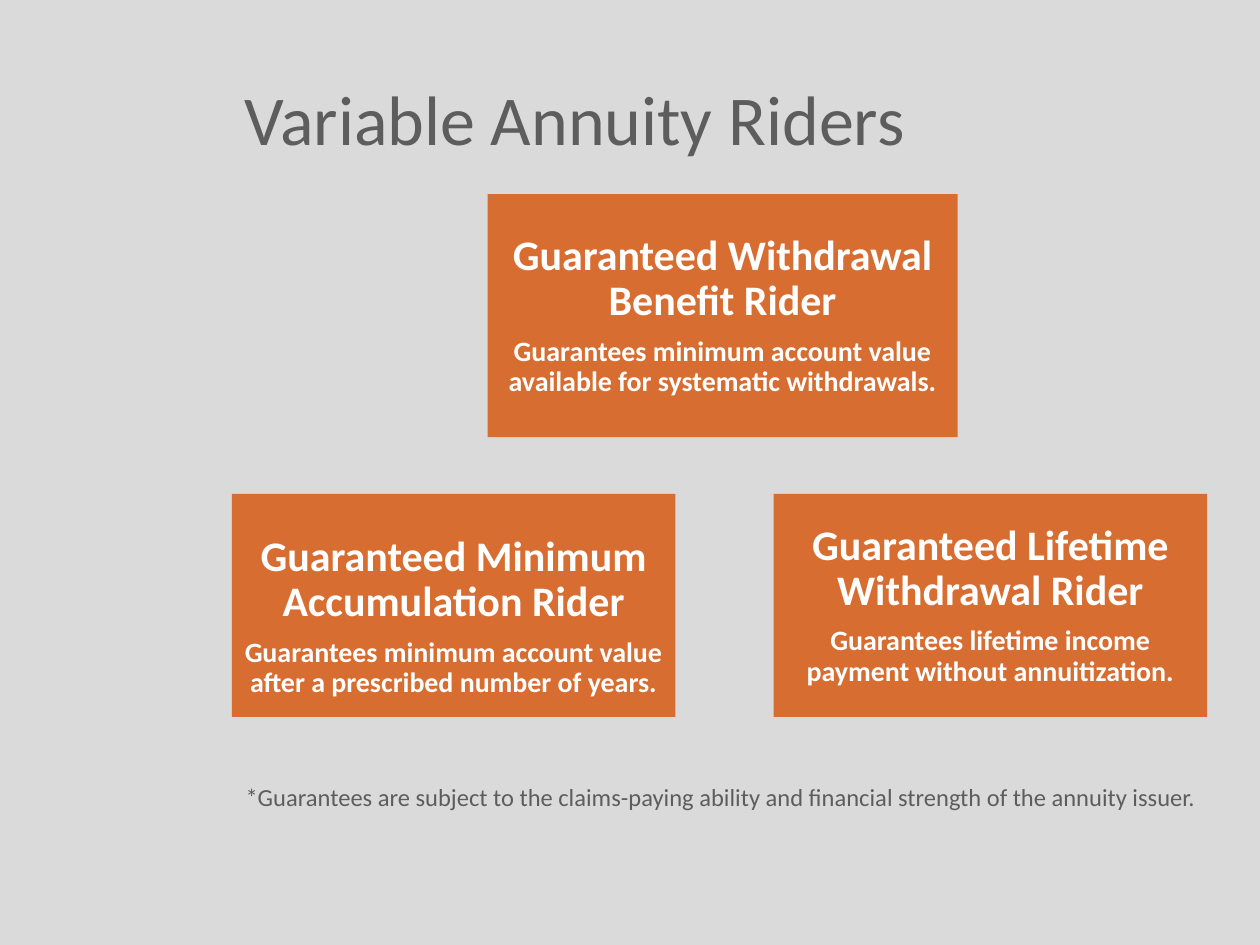
from pptx import Presentation
from pptx.dml.color import RGBColor
from pptx.enum.shapes import MSO_SHAPE as Shape
from pptx.enum.text import MSO_ANCHOR as Anchor, PP_ALIGN as Align
from pptx.util import Inches, Pt

BACKGROUND = RGBColor(0xDA, 0xDA, 0xDA)
GRAY = RGBColor(0x5D, 0x5D, 0x5D)
ORANGE = RGBColor(0xD7, 0x6D, 0x31)
WHITE = RGBColor(0xFF, 0xFF, 0xFF)

# Content
TITLE = "Variable Annuity Riders"
FOOTNOTE = ("*Guarantees are subject to the claims-paying ability and "
            "financial strength of the annuity issuer.")
LEFT = 1.84
LOWER_ROW, LOWER_HEIGHT = 3.92, 1.77
# Heading, description, (left, top, width, height), (top inset, bottom inset)
RIDERS = [
    ("Guaranteed Withdrawal Benefit Rider",
     "Guarantees minimum account value available for systematic withdrawals.",
     (3.87, 1.54, 3.73, 1.93), (0.1, 0.1)),
    ("Guaranteed Minimum Accumulation Rider",
     "Guarantees minimum account value after a prescribed number of years.",
     (LEFT, LOWER_ROW, 3.52, LOWER_HEIGHT), (0.2, 0.02)),
    ("Guaranteed Lifetime Withdrawal Rider",
     "Guarantees lifetime income payment without annuitization.",
     (6.14, LOWER_ROW, 3.44, LOWER_HEIGHT), (0.1, 0.1)),
]


def format_paragraph(paragraph, size, color, align, bold=False):
    paragraph.alignment = align
    font = paragraph.font
    font.name, font.size, font.bold = "Calibri", Pt(size), bold
    font.color.rgb = color


def add_rider(slide, heading, description, place, insets):
    shape = slide.shapes.add_shape(Shape.RECTANGLE, *map(Inches, place))
    shape.shadow.inherit = False
    shape.fill.solid()
    shape.fill.fore_color.rgb = ORANGE
    shape.line.fill.background()
    frame = shape.text_frame
    frame.word_wrap = True
    frame.vertical_anchor = Anchor.MIDDLE
    frame.margin_left = frame.margin_right = Inches(0.1)
    frame.margin_top, frame.margin_bottom = map(Inches, insets)
    frame.text = f"{heading}\n{description}"
    for paragraph, size, gap in zip(frame.paragraphs, (24, 16), (7, 5)):
        format_paragraph(paragraph, size, WHITE, Align.CENTER, bold=True)
        paragraph.line_spacing = 0.9
        paragraph.space_after = Pt(gap)


presentation = Presentation()
presentation.slide_width, presentation.slide_height = Inches(10), Inches(7.5)
slide = presentation.slides.add_slide(presentation.slide_layouts[5])
slide.background.fill.solid()
slide.background.fill.fore_color.rgb = BACKGROUND

# Title
title = slide.shapes.title
title.left, title.top, title.width, title.height = map(Inches, (LEFT, 0.58, 6.98, 0.7))
title.text_frame.text = TITLE
title.text_frame.vertical_anchor = Anchor.MIDDLE
format_paragraph(title.text_frame.paragraphs[0], 40, GRAY, Align.LEFT)

# Rider boxes
for rider in RIDERS:
    add_rider(slide, *rider)

# Footnote
footnote = slide.shapes.add_textbox(*map(Inches, (LEFT + 0.01, 6.16, 8.15, 0.32)))
footnote.text_frame.word_wrap = True
footnote.text_frame.text = FOOTNOTE
format_paragraph(footnote.text_frame.paragraphs[0], 14, GRAY, Align.LEFT)

presentation.save("out.pptx")
